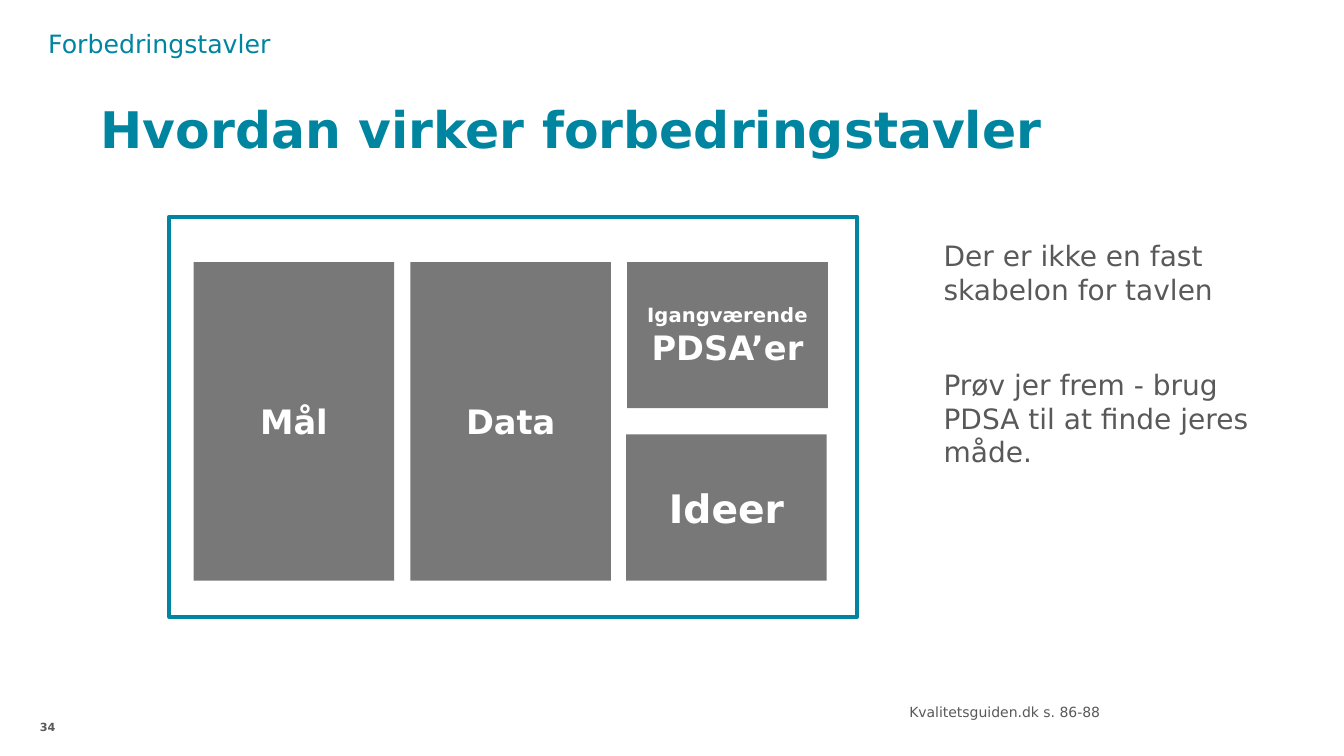
from pptx import Presentation
from pptx.dml.color import RGBColor
from pptx.enum.shapes import MSO_SHAPE
from pptx.enum.text import MSO_ANCHOR, PP_ALIGN
from pptx.util import Inches, Pt

RECT = MSO_SHAPE.RECTANGLE
TOP, MIDDLE, BOTTOM = MSO_ANCHOR.TOP, MSO_ANCHOR.MIDDLE, MSO_ANCHOR.BOTTOM
LEFT, CENTER, RIGHT = PP_ALIGN.LEFT, PP_ALIGN.CENTER, PP_ALIGN.RIGHT
FONT = "DejaVu Sans"
COLORS = {"teal": "0085A0", "title": "0085A1", "text": "595959",
          "card": "787878", "white": "FFFFFF"}


def color(name):
    return RGBColor.from_string(COLORS[name])


def style(para, size, ink, bold=False, align=LEFT):
    para.alignment = align
    font = para.font
    font.name, font.size, font.bold = FONT, Pt(size), bold
    font.color.rgb = color(ink)


def add_text(slide, box, lines, size, ink, bold=False, align=LEFT,
             anchor=TOP, inset=True, pitch=None, gap=0):
    """Write one paragraph per line; gap is the space between them in points."""
    frame = slide.shapes.add_textbox(*map(Inches, box)).text_frame
    frame.word_wrap = True
    frame.vertical_anchor = anchor
    if not inset:
        frame.margin_left = frame.margin_right = 0
        frame.margin_top = frame.margin_bottom = 0
    for i, line in enumerate(lines):
        para = frame.add_paragraph() if i else frame.paragraphs[0]
        para.text = line
        style(para, size, ink, bold, align)
        if pitch:
            para.line_spacing = pitch
        if i:
            para.space_before = Pt(gap)


def add_rect(slide, box, fill, line=None):
    rect = slide.shapes.add_shape(RECT, *map(Inches, box))
    rect.shadow.inherit = False
    rect.fill.solid()
    rect.fill.fore_color.rgb = color(fill)
    if line:
        rect.line.color.rgb = color(line)
        rect.line.width = Pt(3)
    else:
        rect.line.fill.background()
    return rect


def add_card(slide, box, parts):
    """Draw a card whose parts are (text, size) runs of one paragraph."""
    frame = add_rect(slide, box, "card").text_frame
    frame.word_wrap = True
    frame.vertical_anchor = MIDDLE
    para = frame.paragraphs[0]
    style(para, parts[-1][1], "white", True, CENTER)
    for text, size in parts:
        run = para.add_run()
        run.text = text
        run.font.size = Pt(size)


def add_board(slide, x, y, w, h):
    add_rect(slide, (x, y, w, h), "white", "teal")
    wide, tall, short = 1.99, 3.16, 1.45
    left, top, step = x + 0.24, y + 0.45, 2.15
    low = top + tall - short
    cards = [
        (left, top, tall, [("Mål", 24)]),
        (left + step, top, tall, [("Data", 24)]),
        (left + 2 * step, top, short, [("Igangværende ", 14), ("PDSA’er", 24)]),
        (left + 2 * step - 0.01, low, short, [("Ideer", 28)]),
    ]
    for cx, cy, high, parts in cards:
        add_card(slide, (cx, cy, wide, high), parts)


def add_head(slide, x, y, w):
    add_text(slide, (x, y, 6.67, 0.4), ["Forbedringstavler"], 18, "teal")
    add_text(slide, (x + 0.62, y + 0.17, w, 1.18),
             ["Hvordan virker forbedringstavler"], 36, "title", True,
             anchor=BOTTOM, inset=False, pitch=0.9)


def add_notes(slide, x, y, w, h):
    add_text(slide, (x, y, w, h),
             ["Der er ikke en fast skabelon for tavlen",
              "Prøv jer frem - brug PDSA til at finde jeres måde."],
             20, "text", pitch=Pt(24), gap=44)


def add_foot(slide, x, y):
    add_text(slide, (x, y + 0.39, 0.39, 0.35), ["34"], 8, "text", True,
             RIGHT, inset=False)
    add_text(slide, (x + 8.76, y, 4.2, 0.33), ["Kvalitetsguiden.dk s. 86-88"],
             10, "text", pitch=Pt(24))


def main():
    deck = Presentation()
    deck.slide_width, deck.slide_height = Inches(13.33), Inches(7.5)
    slide = deck.slides.add_slide(deck.slide_layouts[6])
    add_board(slide, 1.68, 2.15, 6.82, 3.97)
    add_head(slide, 0.38, 0.23, 10.55)
    add_notes(slide, 9.26, 2.32, 3.42, 3.97)
    add_foot(slide, 0.16, 6.76)
    deck.save("out.pptx")


if __name__ == "__main__":
    main()
